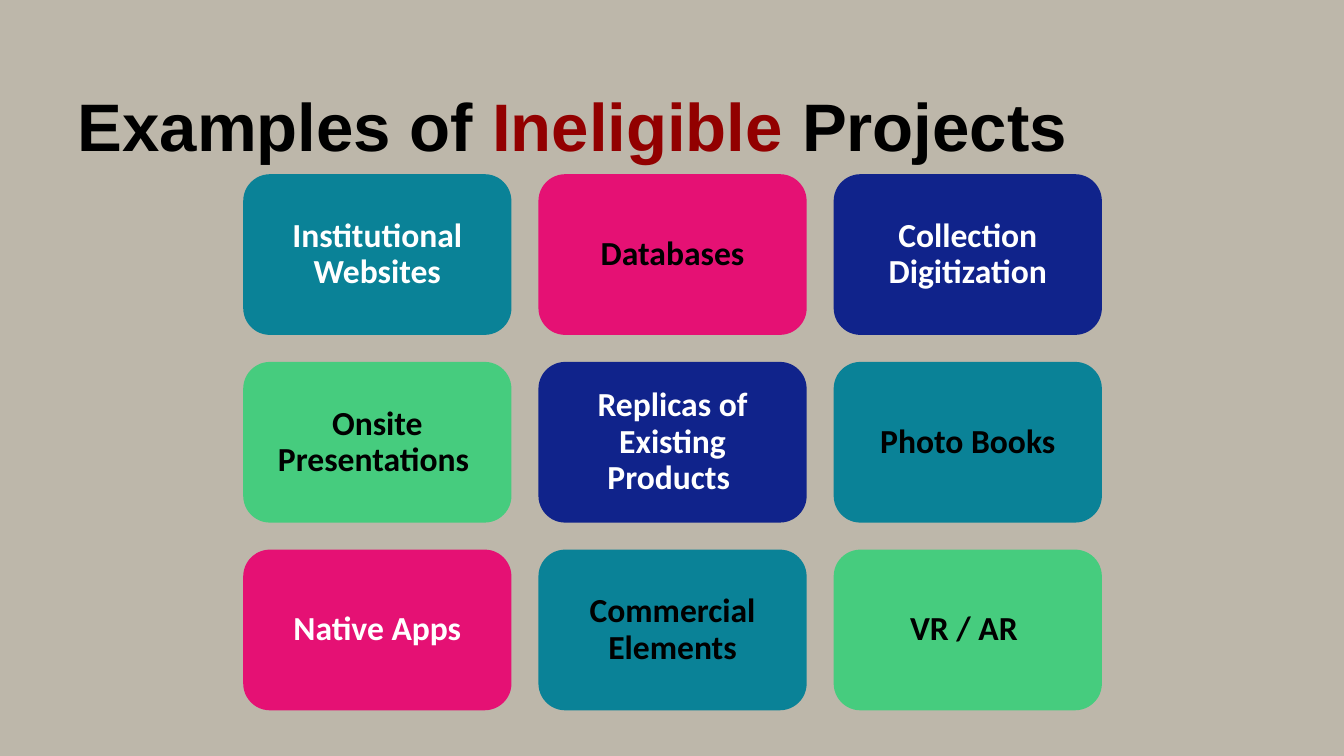
from pptx import Presentation
from pptx.dml.color import RGBColor
from pptx.enum.shapes import MSO_SHAPE
from pptx.enum.text import MSO_ANCHOR, PP_ALIGN
from pptx.util import Cm, Pt

ROUNDED = MSO_SHAPE.ROUNDED_RECTANGLE
TOP, MIDDLE = MSO_ANCHOR.TOP, MSO_ANCHOR.MIDDLE
LEFT, CENTER = PP_ALIGN.LEFT, PP_ALIGN.CENTER

BEIGE, BLACK, WHITE, DARK_RED = "BDB7AA", "000000", "FFFFFF", "920000"
TEAL, PINK, NAVY, GREEN = "0A8297", "E51174", "10238B", "46CC7E"

TITLE = [("Examples of ", BLACK), ("Ineligible", DARK_RED), (" Projects", BLACK)]
PROJECTS = [
    ("Institutional Websites", TEAL, WHITE),
    ("Databases", PINK, BLACK),
    ("Collection Digitization", NAVY, WHITE),
    ("Onsite Presentations ", GREEN, BLACK),
    ("Replicas of Existing Products ", NAVY, WHITE),
    ("Photo Books", TEAL, BLACK),
    ("Native Apps", PINK, WHITE),
    ("Commercial Elements", TEAL, BLACK),
    ("VR / AR ", GREEN, BLACK),
]
COLUMNS = 3
GRID_LEFT, GRID_TOP = 6.13, 4.39
CARD_WIDTH, CARD_HEIGHT, GAP = 6.76, 4.05, 0.68


def color(hex_string):
    return RGBColor.from_string(hex_string)


def write_text(shape, runs, *, font, size, align=LEFT, anchor=TOP,
               line_spacing=1.0, margin=0.0):
    """Fill a shape with one bold paragraph of (text, color) runs."""
    frame = shape.text_frame
    frame.word_wrap = True
    frame.vertical_anchor = anchor
    frame.margin_left = frame.margin_right = Cm(margin)
    frame.margin_top = frame.margin_bottom = Cm(margin)
    paragraph = frame.paragraphs[0]
    paragraph.alignment = align
    paragraph.line_spacing = line_spacing
    for text, text_color in runs:
        run = paragraph.add_run()
        run.text = text
        run.font.name = font
        run.font.size = Pt(size)
        run.font.bold = True
        run.font.color.rgb = color(text_color)


class ProjectSlide:
    title_font = "Arial"
    card_font = "Calibri"

    def __init__(self, presentation):
        self.slide = presentation.slides.add_slide(presentation.slide_layouts[6])
        background = self.slide.background.fill
        background.solid()
        background.fore_color.rgb = color(BEIGE)

    def title(self, runs, left, top, width, height):
        box = self.slide.shapes.add_textbox(Cm(left), Cm(top), Cm(width), Cm(height))
        write_text(box, runs, font=self.title_font, size=48, line_spacing=Pt(60))

    def card(self, text, fill, text_color, left, top):
        shape = self.slide.shapes.add_shape(
            ROUNDED, Cm(left), Cm(top), Cm(CARD_WIDTH), Cm(CARD_HEIGHT))
        shape.shadow.inherit = False
        shape.fill.solid()
        shape.fill.fore_color.rgb = color(fill)
        shape.line.fill.background()
        write_text(shape, [(text, text_color)], font=self.card_font, size=24,
                   align=CENTER, anchor=MIDDLE, line_spacing=0.9, margin=0.24)


def main():
    presentation = Presentation()
    presentation.slide_width = Cm(33.87)
    presentation.slide_height = Cm(19.05)
    page = ProjectSlide(presentation)
    page.title(TITLE, 1.96, 2.03, 29.69, 2.95)
    for index, (text, fill, text_color) in enumerate(PROJECTS):
        row, column = divmod(index, COLUMNS)
        page.card(text, fill, text_color,
                  GRID_LEFT + column * (CARD_WIDTH + GAP),
                  GRID_TOP + row * (CARD_HEIGHT + GAP))
    presentation.save("out.pptx")


if __name__ == "__main__":
    main()
